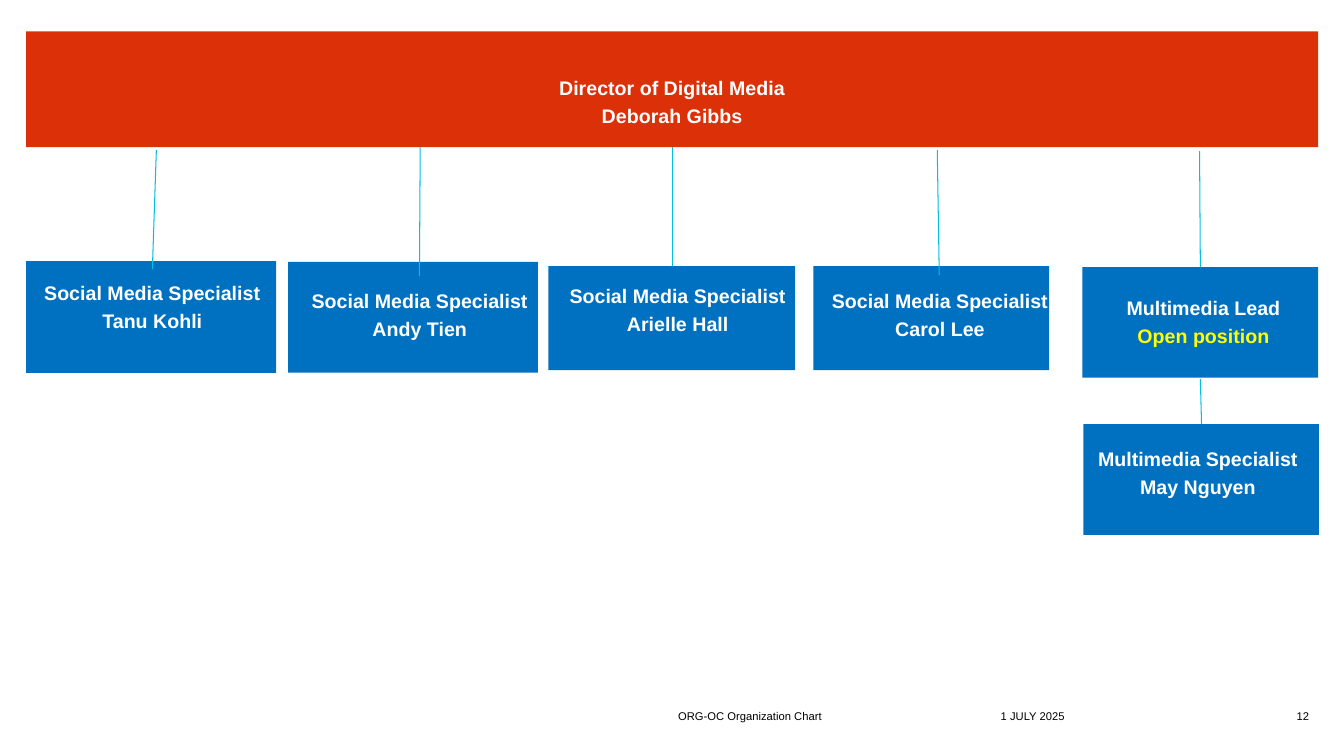
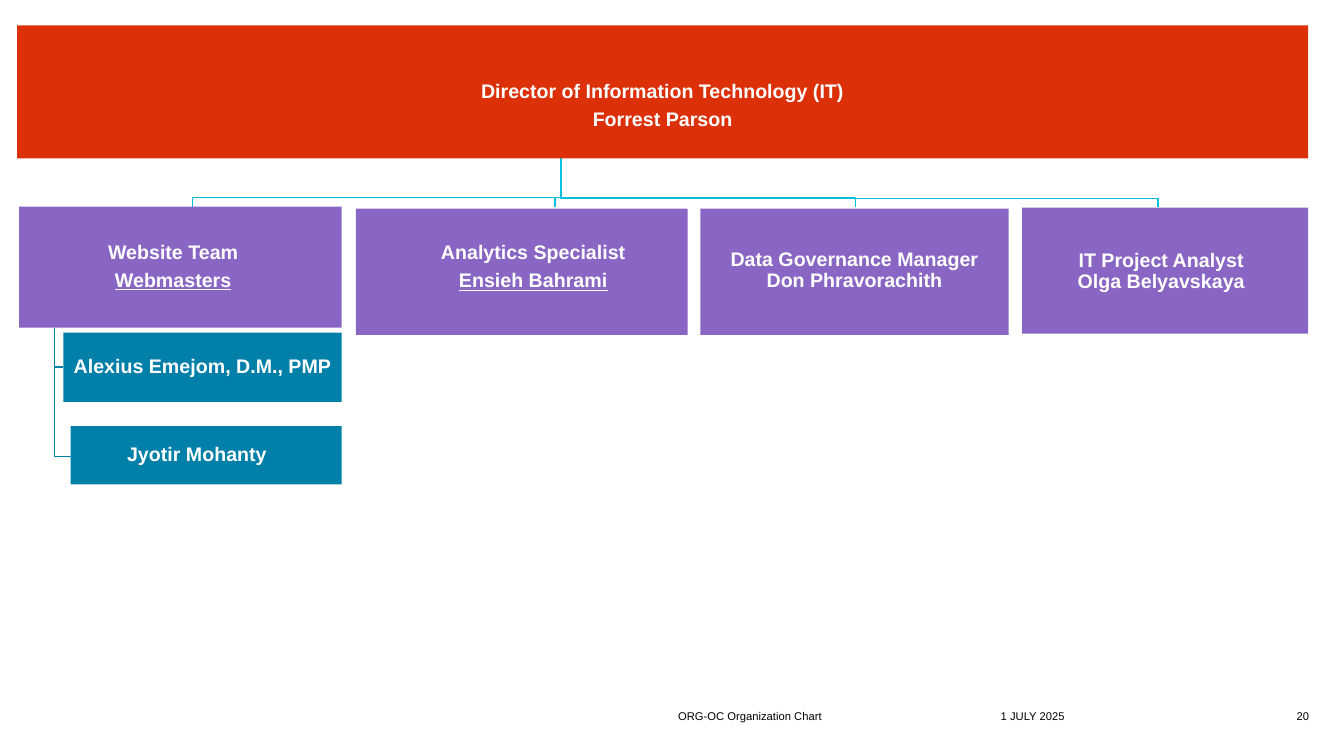
"""Build two organization chart slides: digital media and information technology."""
from dataclasses import dataclass

from lxml.etree import SubElement
from pptx import Presentation
from pptx.dml.color import RGBColor as RGB
from pptx.enum.shapes import MSO_CONNECTOR as LINK, MSO_SHAPE as SHAPE
from pptx.enum.text import MSO_ANCHOR as ANCHOR, PP_ALIGN as ALIGN
from pptx.oxml.ns import qn
from pptx.util import Cm, Pt


@dataclass(frozen=True)
class Theme:
    red: RGB = RGB(0xDC, 0x30, 0x09)
    blue: RGB = RGB(0x00, 0x70, 0xC0)
    violet: RGB = RGB(0x8A, 0x66, 0xC4)
    teal: RGB = RGB(0x00, 0x80, 0xA8)
    cyan: RGB = RGB(0x05, 0xBF, 0xE0)
    white: RGB = RGB(0xFF, 0xFF, 0xFF)
    yellow: RGB = RGB(0xFF, 0xFF, 0x00)
    black: RGB = RGB(0x00, 0x00, 0x00)
    font: str = "Arial"
    body: Pt = Pt(14)
    small: Pt = Pt(8)
    gap: Pt = Pt(4.9)
    thin: Pt = Pt(0.75)
    rule: Pt = Pt(1)


T = Theme()
BODY = {"name": T.font, "size": T.body, "bold": True}
SMALL = {"name": T.font, "size": T.small, "bold": False}


def put(item, form):
    """Set each value of a format dict on an object."""
    for key, val in form.items():
        setattr(item, key, val)


def write(frame, lines, form, para, tint, gap=0):
    """Fill a text frame; a line is text, with its own tint or underline if paired."""
    for i, line in enumerate(lines):
        text, more = line if isinstance(line, tuple) else (line, {})
        p = frame.paragraphs[0] if i == 0 else frame.add_paragraph()
        put(p, para)
        if i:
            p.space_before = gap
        run = p.add_run()
        run.text = text
        put(run.font, form)
        run.font.underline = more.get("underline")
        run.font.color.rgb = more.get("tint", tint)


LINE = {"underline": True}
OPEN = {"tint": T.yellow}
JOB = "Social Media Specialist"

PAGES = [
    {
        "num": "12",
        "cards": [
            (T.red, (0.66, 0.79, 32.56, 2.92), (0, 0.36), T.gap,
             ["Director of Digital Media", "Deborah Gibbs"]),
            (T.blue, (0.66, 6.58, 6.3, 2.82), (0.03, -0.22), T.gap, [JOB, "Tanu Kohli"]),
            (T.blue, (7.26, 6.6, 6.3, 2.79), (0.17, -0.03), T.gap, [JOB, "Andy Tien"]),
            (T.blue, (13.82, 6.71, 6.22, 2.62), (0.15, -0.19), T.gap, [JOB, "Arielle Hall"]),
            (T.blue, (20.5, 6.71, 5.94, 2.62), (0.22, -0.06), T.gap, [JOB, "Carol Lee"]),
            (T.blue, (27.28, 6.73, 5.94, 2.79), (0.08, 0.03), T.gap,
             ["Multimedia Lead", ("Open position", OPEN)]),
            (T.blue, (27.3, 10.69, 5.94, 2.79), (-0.08, -0.13), T.gap,
             ["Multimedia Specialist", "May Nguyen"]),
        ],
        "links": [
            (3.94, 3.78, 3.84, 6.78),
            (10.59, 3.71, 10.57, 6.96),
            (16.94, 3.71, 16.94, 6.71),
            (23.62, 3.78, 23.67, 6.93),
            (30.23, 3.81, 30.25, 6.73),
            (30.25, 9.55, 30.28, 10.69),
        ],
        "elbows": [],
    },
    {
        "num": "20",
        "cards": [
            (T.red, (0.43, 0.64, 32.54, 3.35), (0, 0.36), T.gap,
             ["Director of Information Technology (IT)", "Forrest Parson"]),
            (T.violet, (0.48, 5.21, 8.13, 3.05), (-0.18, 0), T.gap,
             ["Website Team", ("Webmasters", LINE)]),
            (T.violet, (8.97, 5.26, 8.36, 3.18), (0.29, -0.11), T.gap,
             ["Analytics Specialist", ("Ensieh Bahrami", LINE)]),
            (T.violet, (17.65, 5.26, 7.77, 3.18), (0, -0.03), 0,
             ["Data Governance Manager", "Don Phravorachith"]),
            (T.violet, (25.76, 5.23, 7.21, 3.18), (-0.1, 0.03), 0,
             ["IT Project Analyst", "Olga Belyavskaya"]),
            (T.teal, (1.6, 8.38, 7.01, 1.75), (0, 0), 0, ["Alexius Emejom, D.M., PMP"]),
            (T.teal, (1.78, 10.74, 6.83, 1.47), (-0.23, 0), 0, ["Jyotir Mohanty"]),
        ],
        "links": [],
        "elbows": [
            (T.cyan, [(x, 3.99), (x, y), (end, y), (end, 5.21)])
            for x, y, end in [(14.15, 4.98, 4.85), (14.15, 4.98, 13.99),
                              (14.15, 4.98, 21.56), (14.12, 5, 29.18)]
        ] + [
            (T.teal, [(1.37, 8.26), (1.37, y), (end, y)])
            for y, end in [(9.25, 1.6), (11.51, 1.78)]
        ],
    },
]

deck = Presentation()
put(deck, {"slide_width": Cm(33.87), "slide_height": Cm(19.05)})

for page in PAGES:
    slide = deck.slides.add_slide(deck.slide_layouts[6])
    shapes = slide.shapes

    for tint, dots in page["elbows"]:
        start, *rest = [(Cm(x), Cm(y)) for x, y in dots]
        pen = shapes.build_freeform(*start)
        pen.add_line_segments(rest, close=False)
        elbow = pen.convert_to_shape()
        elbow.shadow.inherit = False
        elbow.fill.background()
        elbow.line.color.rgb = tint
        elbow.line.width = T.rule

    for fill, spot, (dx, dy), gap, lines in page["cards"]:
        card = shapes.add_shape(SHAPE.RECTANGLE, *map(Cm, spot))
        card.shadow.inherit = False
        card.fill.solid()
        card.fill.fore_color.rgb = fill
        card.line.fill.background()
        put(card.text_frame, {
            "word_wrap": False,
            "vertical_anchor": ANCHOR.MIDDLE,
            "margin_left": Cm(max(2 * dx, 0)),
            "margin_right": Cm(max(-2 * dx, 0)),
            "margin_top": Cm(max(2 * dy, 0)),
            "margin_bottom": Cm(max(-2 * dy, 0)),
        })
        para = {"alignment": ALIGN.CENTER, "line_spacing": 0.9}
        write(card.text_frame, lines, BODY, para, T.white, gap)

    for ends in page["links"]:
        link = shapes.add_connector(LINK.STRAIGHT, *map(Cm, ends))
        link.line.color.rgb = T.cyan
        link.line.width = T.thin
        SubElement(link._element.spPr, qn("a:effectLst"))

    for x, width, side, text in [
        (17.09, 7.77, ALIGN.LEFT, "ORG-OC Organization Chart"),
        (25.22, 5.05, ALIGN.LEFT, "1 JULY 2025"),
        (31.85, 1.14, ALIGN.RIGHT, page["num"]),
    ]:
        foot = shapes.add_textbox(Cm(x), Cm(17.65), Cm(width), Cm(0.56)).text_frame
        put(foot, {"word_wrap": True, "vertical_anchor": ANCHOR.BOTTOM, "margin_left": 0,
                   "margin_right": 0, "margin_top": 0, "margin_bottom": 0})
        write(foot, [text], SMALL, {"alignment": side}, T.black)

deck.save("out.pptx")
